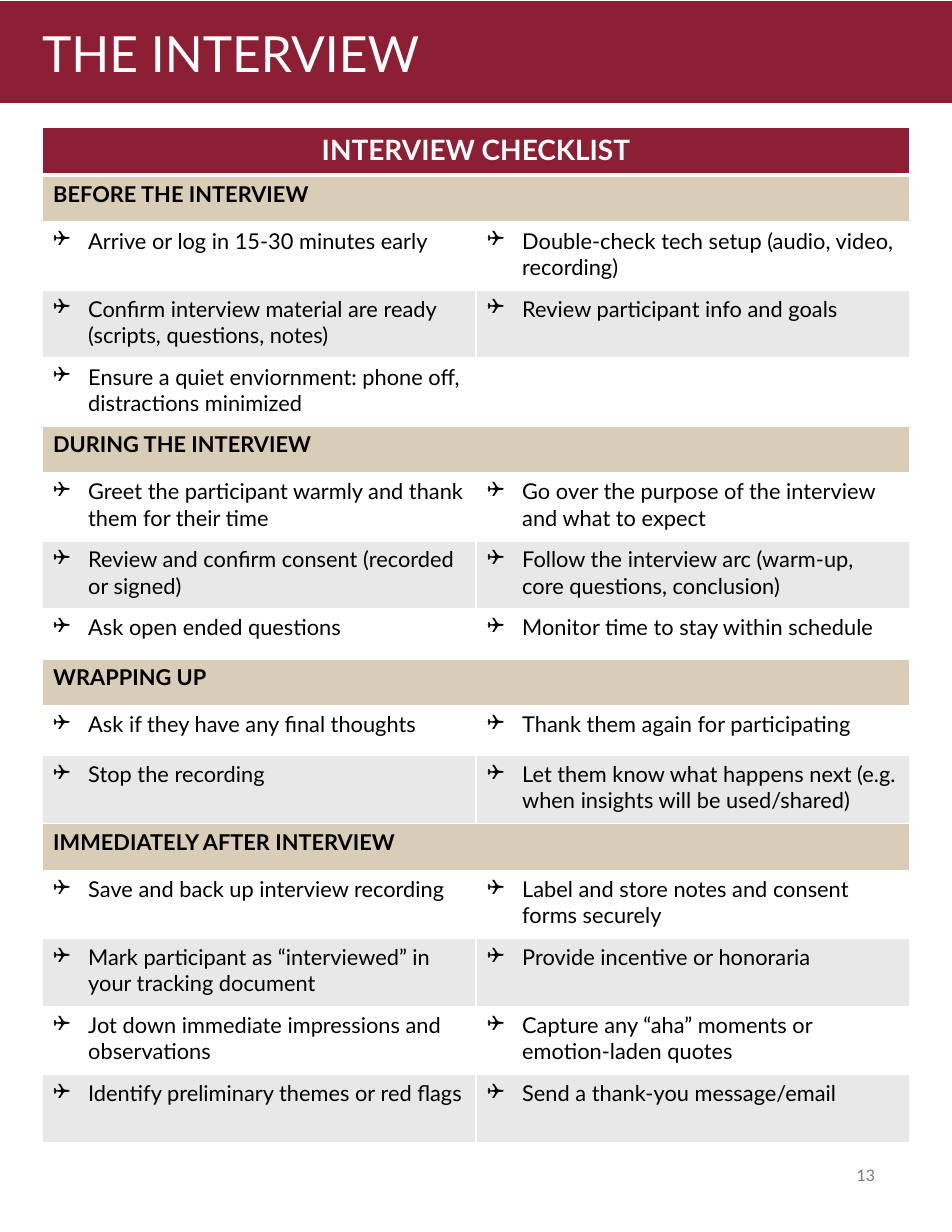
"""Build the interview checklist page."""
from lxml import etree
from pptx import Presentation
from pptx import util as u
from pptx.dml.color import RGBColor
from pptx.enum import shapes, text
from pptx.oxml.ns import qn

PX = 914400 // 112
FONT = "Lato"
MAROON, TAN, GRAY, WHITE, BLACK = "8C1F34", "D9CDB8", "E8E8E8", "FFFFFF", "000000"
BANNER, HEADING, SINGLE, DOUBLE = 48, 47, 50, 68
TABLE_LEFT, TABLE_TOP, COLUMN = 42, 127, 434
INDENT = 35

SECTIONS = [
    ("BEFORE THE INTERVIEW", [
        (DOUBLE, "Arrive or log in 15-30 minutes early",
         "Double-check tech setup (audio, video, recording)"),
        (DOUBLE, "Confirm interview material are ready (scripts, questions, notes)",
         "Review participant info and goals"),
        (DOUBLE, "Ensure a quiet enviornment: phone off, distractions minimized", ""),
    ]),
    ("DURING THE INTERVIEW", [
        (DOUBLE, "Greet the participant warmly and thank them for their time",
         "Go over the purpose of the interview and what to expect"),
        (DOUBLE, "Review and confirm consent (recorded or signed)",
         "Follow the interview arc (warm-up, core questions, conclusion)"),
        (SINGLE, "Ask open ended questions", "Monitor time to stay within schedule"),
    ]),
    ("WRAPPING UP", [
        (SINGLE, "Ask if they have any final thoughts", "Thank them again for participating"),
        (DOUBLE, "Stop the recording",
         "Let them know what happens next (e.g. when insights will be used/shared)"),
    ]),
    ("IMMEDIATELY AFTER INTERVIEW", [
        (DOUBLE, "Save and back up interview recording",
         "Label and store notes and consent forms securely"),
        (DOUBLE, "Mark participant as “interviewed” in your tracking document",
         "Provide incentive or honoraria"),
        (DOUBLE, "Jot down immediate impressions and observations",
         "Capture any “aha” moments or emotion-laden quotes"),
        (DOUBLE, "Identify preliminary themes or red flags", "Send a thank-you message/email"),
    ]),
]


def color(value):
    return RGBColor.from_string(value)


def fill(target, value):
    target.fill.solid()
    target.fill.fore_color.rgb = color(value)


def write(frame, words, size, ink, bold=False, align=text.PP_ALIGN.LEFT):
    paragraph = frame.paragraphs[0]
    paragraph.text = words
    paragraph.alignment = align
    font = paragraph.font
    font.name, font.size, font.bold = FONT, u.Pt(size), bold
    font.color.rgb = color(ink)
    return paragraph


def add_text(slide, box, words, size, ink, align=text.PP_ALIGN.LEFT):
    frame = slide.shapes.add_textbox(*(n * PX for n in box)).text_frame
    frame.word_wrap = True
    frame.vertical_anchor = text.MSO_ANCHOR.MIDDLE
    write(frame, words, size, ink, align=align)


def add_checkbox(paragraph):
    properties = paragraph._p.get_or_add_pPr()
    properties.set("marL", str(INDENT * PX))
    properties.set("indent", str(-INDENT * PX))
    etree.SubElement(properties, qn("a:buFont"), typeface="Wingdings")
    etree.SubElement(properties, qn("a:buChar"), char="❑")


def style_cell(cell, background, top=1, bottom=1):
    properties = cell._tc.get_or_add_tcPr()
    for side, width in (("L", 1), ("R", 1), ("T", top), ("B", bottom)):
        line = etree.SubElement(properties, qn("a:ln" + side), w=str(u.Pt(width)))
        solid = etree.SubElement(line, qn("a:solidFill"))
        etree.SubElement(solid, qn("a:srgbClr"), val=WHITE)
    fill(cell, background)


def add_checklist(slide):
    rows = [(BANNER, "INTERVIEW CHECKLIST", None, MAROON)]
    for heading, tasks in SECTIONS:
        rows.append((HEADING, heading, None, TAN))
        rows += [(*task, GRAY if i % 2 else WHITE) for i, task in enumerate(tasks)]
    height = sum(row[0] for row in rows)
    table = slide.shapes.add_table(len(rows), 2, TABLE_LEFT * PX, TABLE_TOP * PX,
                                   2 * COLUMN * PX, height * PX).table
    table.first_row = table.horz_banding = False
    for column in table.columns:
        column.width = COLUMN * PX
    for i, (row_height, left, right, background) in enumerate(rows):
        table.rows[i].height = row_height * PX
        cells = [table.cell(i, j) for j in range(2)]
        for cell in cells:
            style_cell(cell, background, top=3 if i == 1 else 1, bottom=3 if i == 0 else 1)
        if right is None:
            cells[0].merge(cells[1])
            if i == 0:
                write(cells[0].text_frame, left, 18, WHITE, True, text.PP_ALIGN.CENTER)
            else:
                write(cells[0].text_frame, left, 14, BLACK, True)
            continue
        for cell, words in zip(cells, (left, right)):
            paragraph = write(cell.text_frame, words, 14, BLACK)
            if words:
                add_checkbox(paragraph)


def main():
    presentation = Presentation()
    presentation.slide_width, presentation.slide_height = 952 * PX, 1232 * PX
    slide = presentation.slides.add_slide(presentation.slide_layouts[6])
    band = slide.shapes.add_shape(shapes.MSO_SHAPE.RECTANGLE, 0, PX, 952 * PX, 102 * PX)
    band.shadow.inherit = False
    fill(band, MAROON)
    band.line.fill.background()
    add_text(slide, (31, 17, 869, 72), "THE INTERVIEW", 32, WHITE)
    add_text(slide, (672, 1142, 214, 66), "13", 10.2, "797979", text.PP_ALIGN.RIGHT)
    add_checklist(slide)
    presentation.save("out.pptx")


if __name__ == "__main__":
    main()
